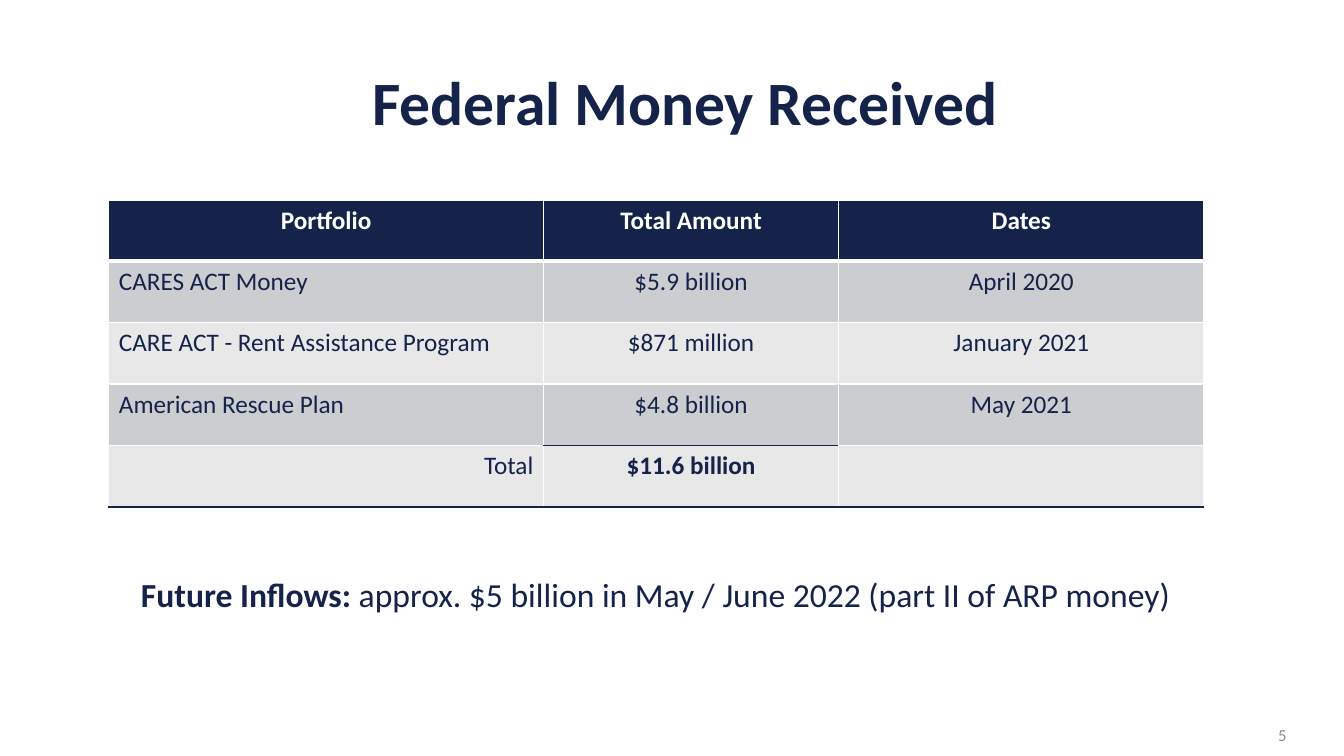
from lxml import etree
from pptx import Presentation
from pptx.dml.color import RGBColor
from pptx.enum.text import MSO_ANCHOR, PP_ALIGN
from pptx.oxml.ns import qn
from pptx.util import Emu, Pt

LEFT, CENTER, RIGHT = PP_ALIGN.LEFT, PP_ALIGN.CENTER, PP_ALIGN.RIGHT
MIDDLE, TOP = MSO_ANCHOR.MIDDLE, MSO_ANCHOR.TOP
EMU_PER_PX = 9144  # 100 px to the inch
NAVY, WHITE, GRAY = "15234A", "FFFFFF", "8C8D96"
BANDS = ["CCCDD0", "E8E8E9"]
FONT = "Calibri"

# Content: runs are (text, bold)
TEXTS = [
    {"box": (146, 67, 1067, 75), "runs": [("Federal Money Received", True)],
     "size": 44, "color": NAVY, "align": CENTER, "anchor": MIDDLE, "wrap": True, "spacing": 0.9},
    {"box": (986, 709, 300, 40), "runs": [("5", False)],
     "size": 12, "color": GRAY, "align": RIGHT, "anchor": MIDDLE, "wrap": True, "spacing": 1.0},
    {"box": (130, 564, 1050, 50),
     "runs": [("Future Inflows: ", True),
              ("approx. $5 billion in May / June 2022 (part II of ARP money)", False)],
     "size": 24, "color": NAVY, "align": LEFT, "anchor": TOP, "wrap": False, "spacing": 1.0},
]
ROWS = [
    ("Portfolio", "Total Amount", "Dates"),
    ("CARES ACT Money", "$5.9 billion", "April 2020"),
    ("CARE ACT - Rent Assistance Program", "$871 million", "January 2021"),
    ("American Rescue Plan", "$4.8 billion", "May 2021"),
    ("Total", "$11.6 billion", ""),
]
TABLE_LEFT, TABLE_TOP = 108, 199
COLUMN_WIDTHS = [431, 293, 362]
ROW_HEIGHTS = [60, 61, 61, 61, 61]
LAST_ROW = len(ROWS) - 1
AMOUNT_COLUMN = 1


def px(length):
    return Emu(length * EMU_PER_PX)


def rgb(color):
    return RGBColor.from_string(color)


def write(paragraph, runs, size, color, align):
    paragraph.alignment = align
    for text, bold in runs:
        run = paragraph.add_run()
        run.text = text
        run.font.color.rgb = rgb(color)
        for name, value in {"name": FONT, "size": Pt(size), "bold": bold}.items():
            setattr(run.font, name, value)


def rule(line, column):
    """Colour and width of the horizontal rule above row number `line`."""
    if line == 1:
        return WHITE, 3
    if line > LAST_ROW or (line == LAST_ROW and column == AMOUNT_COLUMN):
        return NAVY, 1
    return WHITE, 1


def set_borders(cell, row, column):
    properties = cell._tc.get_or_add_tcPr()
    borders = {"a:lnL": (WHITE, 1), "a:lnR": (WHITE, 1),
               "a:lnT": rule(row, column), "a:lnB": rule(row + 1, column)}
    for position, (tag, (color, width)) in enumerate(borders.items()):
        border = etree.Element(qn(tag), w=str(Pt(width)))
        fill = etree.SubElement(border, qn("a:solidFill"))
        etree.SubElement(fill, qn("a:srgbClr"), val=color)
        properties.insert(position, border)


def add_text(slide, item):
    frame = slide.shapes.add_textbox(*map(px, item["box"])).text_frame
    frame.word_wrap = item["wrap"]
    frame.vertical_anchor = item["anchor"]
    paragraph = frame.paragraphs[0]
    paragraph.line_spacing = item["spacing"]
    write(paragraph, item["runs"], item["size"], item["color"], item["align"])


def add_money_table(slide):
    table = slide.shapes.add_table(
        len(ROWS), len(COLUMN_WIDTHS), px(TABLE_LEFT), px(TABLE_TOP),
        px(sum(COLUMN_WIDTHS)), px(sum(ROW_HEIGHTS))).table
    for column, width in zip(table.columns, COLUMN_WIDTHS):
        column.width = px(width)
    for table_row, height in zip(table.rows, ROW_HEIGHTS):
        table_row.height = px(height)
    for row, texts in enumerate(ROWS):
        for column, text in enumerate(texts):
            cell = table.cell(row, column)
            header = row == 0
            cell.fill.solid()
            cell.fill.fore_color.rgb = rgb(NAVY if header else BANDS[(row - 1) % 2])
            set_borders(cell, row, column)
            align = CENTER
            if column == 0 and not header:
                align = RIGHT if row == LAST_ROW else LEFT
            bold = header or (row == LAST_ROW and column == AMOUNT_COLUMN)
            runs = [(text, bold)] if text else []
            write(cell.text_frame.paragraphs[0], runs, 18, WHITE if header else NAVY, align)


def main():
    presentation = Presentation()
    presentation.slide_width, presentation.slide_height = px(1333), px(750)
    slide = presentation.slides.add_slide(presentation.slide_layouts[6])
    # Table, then title, page number and closing line
    add_money_table(slide)
    for item in TEXTS:
        add_text(slide, item)
    presentation.save("out.pptx")


if __name__ == "__main__":
    main()
